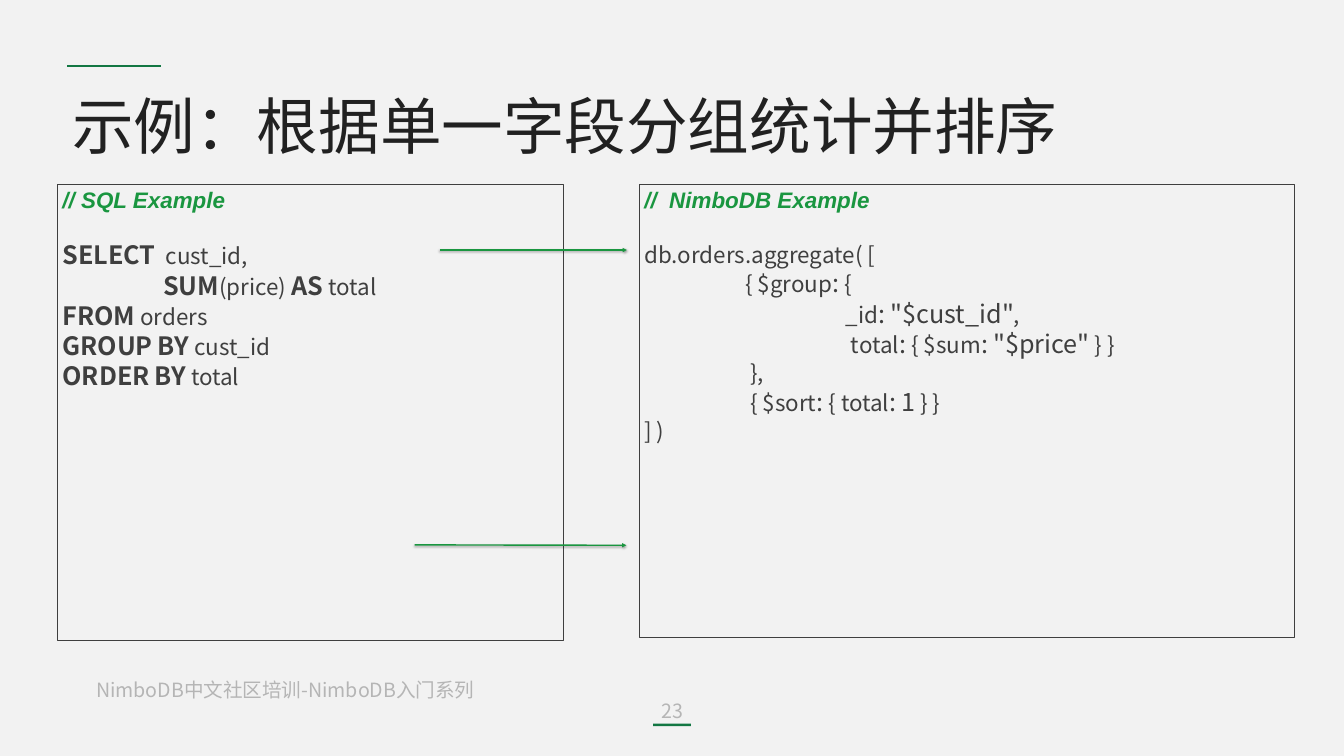
from lxml.etree import SubElement
from pptx import Presentation
from pptx.dml.color import RGBColor
from pptx.enum.shapes import MSO_CONNECTOR as CONN, MSO_SHAPE as SHAPE
from pptx.enum.text import MSO_ANCHOR as ANCHOR, MSO_AUTO_SIZE as FIT, PP_ALIGN as ALIGN
from pptx.oxml import parse_xml
from pptx.oxml.ns import nsdecls, qn
from pptx.util import Cm, Pt

C = {"bg": "F2F2F2", "title": "212121", "body": "3F3F3F", "muted": "B5B5B5",
     "green": "1A9640", "accent": "137743"}
SC, TC, JP = "Noto Sans CJK SC", "Noto Sans CJK TC", "Noto Sans CJK JP"
INDENT = Cm(5.08)


def add_run(p, text, size, font, color, bold=False, italic=False):
    r = p.add_run()
    r.text = text
    f = r.font
    f.size, f.name, f.bold, f.italic = Pt(size), font, bold, italic
    f.color.rgb = RGBColor.from_string(C[color])
    SubElement(r._r.get_or_add_rPr(), qn("a:ea")).set("typeface", font)


def add_line(x1, y1, x2, y2, color, width):
    line = s.shapes.add_connector(CONN.STRAIGHT, Cm(x1), Cm(y1), Cm(x2), Cm(y2))
    line.line.color.rgb = RGBColor.from_string(C[color])
    line.line.width = Pt(width)
    effects = SubElement(line._element.spPr, qn("a:effectLst"))
    return line, effects


prs = Presentation()
prs.slide_width, prs.slide_height = Cm(67.74), Cm(38.1)
s = prs.slides.add_slide(prs.slide_layouts[5])
s.background.fill.solid()
s.background.fill.fore_color.rgb = RGBColor.from_string(C["bg"])

# Footer and page number
for x, y, w, text, font, align in [
    (4.6, 34.04, 22.23, "NimboDB中文社区培训-NimboDB入门系列", SC, ALIGN.LEFT),
    (31.83, 35.1, 4.11, "23", TC, ALIGN.CENTER),
]:
    tf = s.shapes.add_textbox(Cm(x), Cm(y), Cm(w), Cm(1.45)).text_frame
    tf.word_wrap = True
    tf.vertical_anchor = ANCHOR.MIDDLE
    tf.margin_top = tf.margin_bottom = 0
    tf.paragraphs[0].alignment = align
    add_run(tf.paragraphs[0], text, 28, font, "muted")

# Accent marks
bar = s.shapes.add_shape(SHAPE.RECTANGLE, Cm(32.92), Cm(36.47), Cm(1.9), Cm(0.13))
bar.shadow.inherit = False
bar.fill.solid()
bar.fill.fore_color.rgb = RGBColor.from_string(C["accent"])
bar.line.fill.background()
add_line(3.38, 3.33, 8.1, 3.33, "accent", 3.25)

# Title
title = s.shapes.title
title.left, title.top, title.width, title.height = Cm(3.38), Cm(3.86), Cm(60.88), Cm(4.83)
tf = title.text_frame
tf.auto_size = FIT.NONE
tf.vertical_anchor = ANCHOR.MIDDLE
tf.paragraphs[0].alignment = ALIGN.LEFT
add_run(tf.paragraphs[0], "示例：根据单一字段分组统计并排序", 88, JP, "title")

# Code panels: (indent level, text), where every second piece between bars is larger
sql = [
    (0, "|SELECT|  cust_id,"),
    (1, "|SUM|(price) |AS| total"),
    (0, "|FROM| orders"),
    (0, "|GROUP| |BY| cust_id"),
    (0, "|ORDER| |BY| total"),
]
document_query = [
    (0, "db.orders.aggregate( ["),
    (1, "{ $group|:| {"),
    (2, '_id|:| |"$cust_id"|,'),
    (2, ' total|:| { $sum|:| |"$price"| } }'),
    (1, " },"),
    (1, " { $sort|:| { total|:| |1| } }"),
    (0, "] )"),
]
for x, w, h, heading, code, bold_large in [
    (2.9, 25.5, 22.99, "// SQL Example", sql, True),
    (32.23, 32.99, 22.83, "//  NimboDB Example", document_query, False),
]:
    panel = s.shapes.add_shape(SHAPE.RECTANGLE, Cm(x), Cm(9.27), Cm(w), Cm(h))
    panel.shadow.inherit = False
    panel.fill.background()
    panel.line.color.rgb = RGBColor.from_string(C["body"])
    panel.line.width = Pt(0.75)
    tf = panel.text_frame
    tf.word_wrap = True
    tf.vertical_anchor = ANCHOR.TOP
    p = tf.paragraphs[0]
    p.alignment = ALIGN.LEFT
    add_run(p, heading, 32, "Arial", "green", bold=True, italic=True)
    for i, (level, text) in enumerate(code):
        p = tf.add_paragraph()
        p.alignment = ALIGN.LEFT
        p.line_spacing = Pt(43 if "|" in text else 40)
        p.space_before = Pt(0 if i else 38)
        p._p.get_or_add_pPr().set("marL", str(level * INDENT))
        for j, piece in enumerate(text.split("|")):
            large = j % 2 == 1
            if piece:
                add_run(p, piece, 36 if large else 32, TC, "body", bold=large and bold_large)

# Arrows between the panels
for x1, y1, x2, y2 in [(22.17, 12.6, 31.6, 12.6), (20.9, 27.46, 31.57, 27.48)]:
    arrow, effects = add_line(x1, y1, x2, y2, "green", 2)
    SubElement(arrow.line._get_or_add_ln(), qn("a:tailEnd")).set("type", "triangle")
    effects.append(parse_xml(
        f'<a:outerShdw {nsdecls("a")} blurRad="40000" dist="20000" dir="5400000" rotWithShape="0">'
        '<a:srgbClr val="000000"><a:alpha val="38000"/></a:srgbClr></a:outerShdw>'))

prs.save("out.pptx")
